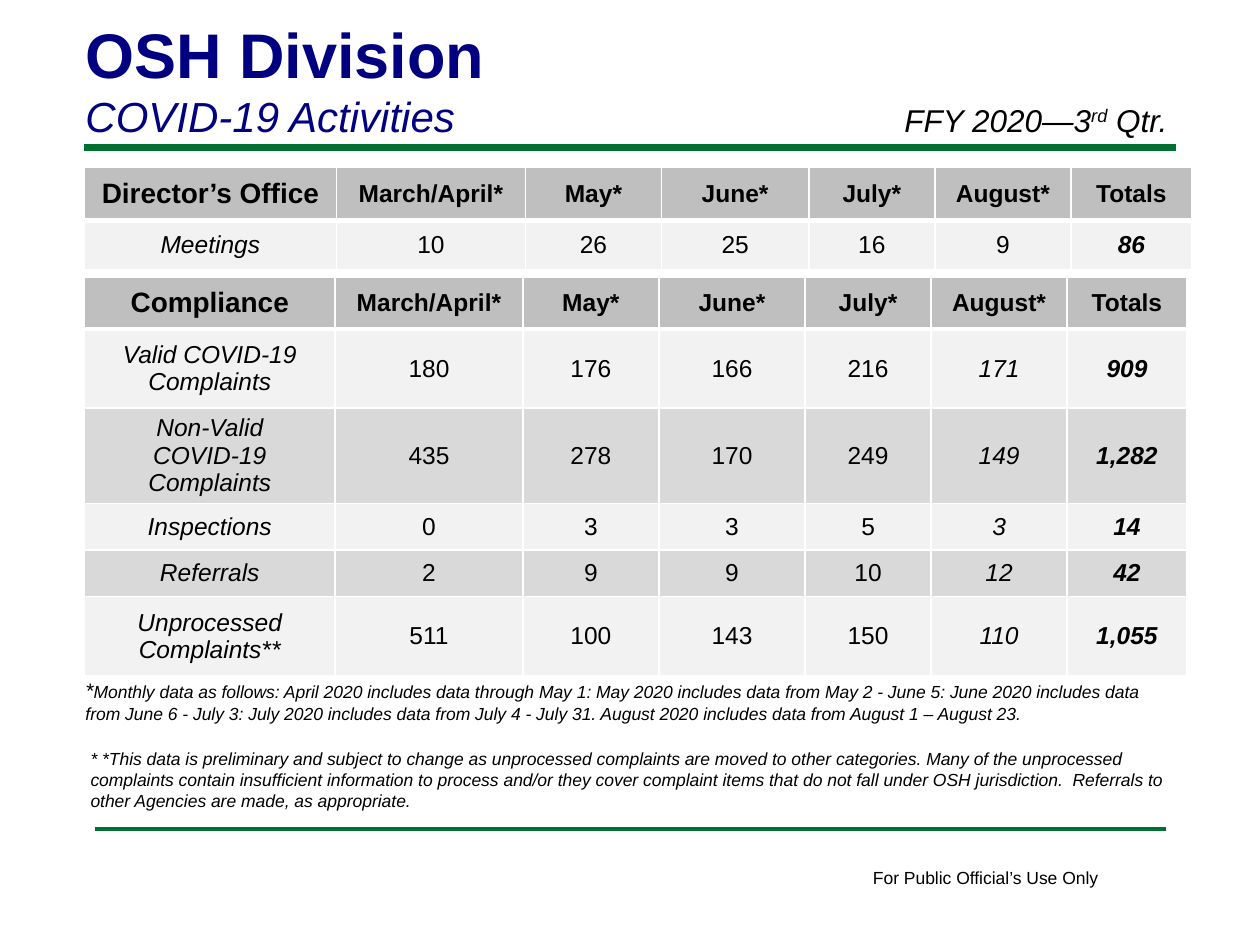
"""Build the OSH Division COVID-19 activities slide."""
from lxml import etree
from pptx import Presentation
from pptx.dml.color import RGBColor
from pptx.enum.shapes import MSO_CONNECTOR
from pptx.enum.text import MSO_ANCHOR, PP_ALIGN
from pptx.oxml.ns import qn
from pptx.util import Inches, Pt

STRAIGHT = MSO_CONNECTOR.STRAIGHT
TOP, MIDDLE, BOTTOM = MSO_ANCHOR.TOP, MSO_ANCHOR.MIDDLE, MSO_ANCHOR.BOTTOM
CENTER = PP_ALIGN.CENTER

FONT = "Arial"
BLACK, NAVY, GREEN, WHITE = "000000", "000080", "007030", "FFFFFF"
HEADER_FILL, BAND_FILLS = "BFBFBF", ("F2F2F2", "D9D9D9")

PERIODS = ["March/April*", "May*", "June*", "July*", "August*", "Totals"]
TABLES = [
    {
        "box": (0.67, 1.33, 8.79, 0.81),
        "columns": (2, 1.5, 1.08, 1.17, 1, 1.08, 0.96),
        "heights": (0.42, 0.39),
        "italic_columns": (0, 6),
        "rows": [
            ["Director’s Office", *PERIODS],
            ["Meetings", "10", "26", "25", "16", "9", "86"],
        ],
    },
    {
        "box": (0.67, 2.2, 8.75, 3.06),
        "columns": (1.99, 1.49, 1.08, 1.16, 1, 1.08, 0.95),
        "heights": (0.41, 0.63, 0.63, 0.37, 0.37, 0.63),
        "italic_columns": (0, 5, 6),
        "rows": [
            ["Compliance", *PERIODS],
            ["Valid COVID-19 Complaints", "180", "176", "166", "216", "171", "909"],
            ["Non-Valid COVID-19 Complaints", "435", "278", "170", "249", "149", "1,282"],
            ["Inspections", "0", "3", "3", "5", "3", "14"],
            ["Referrals", "2", "9", "9", "10", "12", "42"],
            ["Unprocessed Complaints**", "511", "100", "143", "150", "110", "1,055"],
        ],
    },
]

RULES = [(0.67, 9.33, 1.17, 4), (0.75, 9.25, 6.58, 2)]

TITLE = [
    [("OSH Division", {"size": 36, "color": NAVY, "bold": True})],
    [("COVID-19 Activities", {"size": 24, "color": NAVY, "italic": True})],
]
QUARTER = [[
    ("FFY 2020—3", {"size": 18, "italic": True}),
    ("rd", {"size": 18, "italic": True, "baseline": 30}),
    (" Qtr.", {"size": 18, "italic": True}),
]]
MONTHLY_NOTE = [[
    ("*", {"size": 12, "italic": True}),
    ("Monthly data as follows: April 2020 includes data through May 1: May 2020 "
     "includes data from May 2 - June 5: June 2020 includes data from June 6 - July 3: "
     "July 2020 includes data from July 4 - July 31. August 2020 includes data from "
     "August 1 – August 23.", {"size": 10, "italic": True}),
]]
PRELIMINARY_NOTE = [[
    ("* *This data is preliminary and subject to change as unprocessed complaints are "
     "moved to other categories. Many of the unprocessed complaints contain insufficient "
     "information to process and/or they cover complaint items that do not fall under OSH "
     "jurisdiction.  Referrals to other Agencies are made, as appropriate.",
     {"size": 10, "italic": True}),
]]
USE_NOTICE = [[("For Public Official’s Use Only", {"size": 10})]]

TEXTS = [
    ((6.83, 6.83, 2.01, 0.27), USE_NOTICE, TOP, False),
    ((0.58, 0.06, 8.25, 1.11), TITLE, BOTTOM, True),
    ((0.62, 5.89, 8.79, 0.61), PRELIMINARY_NOTE, TOP, True),
    ((7.08, 0.75, 2.5, 0.4), QUARTER, TOP, True),
    ((0.58, 5.33, 8.79, 0.47), MONTHLY_NOTE, TOP, True),
]


def rgb(color):
    return RGBColor.from_string(color)


def style_run(run, size, color=BLACK, bold=False, italic=False, baseline=0):
    font = run.font
    font.name, font.size = FONT, Pt(size)
    font.bold, font.italic = bold, italic
    font.color.rgb = rgb(color)
    if baseline:
        run._r.get_or_add_rPr().set("baseline", str(baseline * 1000))


def add_rule(slide, left, right, y, width):
    rule = slide.shapes.add_connector(
        STRAIGHT, Inches(left), Inches(y), Inches(right), Inches(y))
    rule.line.color.rgb = rgb(GREEN)
    rule.line.width = Pt(width)
    etree.SubElement(rule._element.spPr, qn("a:effectLst"))


def add_text(slide, box, paragraphs, anchor, wrap):
    frame = slide.shapes.add_textbox(*map(Inches, box)).text_frame
    frame.word_wrap = wrap
    frame.vertical_anchor = anchor
    for index, pieces in enumerate(paragraphs):
        paragraph = frame.add_paragraph() if index else frame.paragraphs[0]
        for text, style in pieces:
            run = paragraph.add_run()
            run.text = text
            style_run(run, **style)


def set_borders(cell, top, bottom):
    properties = cell._tc.get_or_add_tcPr()
    for side, width in (("L", 1), ("R", 1), ("T", top), ("B", bottom)):
        line = etree.SubElement(properties, qn(f"a:ln{side}"), w=str(Pt(width)))
        fill = etree.SubElement(line, qn("a:solidFill"))
        etree.SubElement(fill, qn("a:srgbClr"), val=WHITE)


def fill_cell(cell, text, row, column, italic_columns):
    header = row == 0
    set_borders(cell, top=3 if row == 1 else 1, bottom=3 if header else 1)
    cell.fill.solid()
    cell.fill.fore_color.rgb = rgb(HEADER_FILL if header else BAND_FILLS[(row - 1) % 2])
    cell.vertical_anchor = MIDDLE
    cell.text_frame.text = text
    paragraph = cell.text_frame.paragraphs[0]
    paragraph.alignment = CENTER
    style_run(
        paragraph.runs[0],
        size=16 if header and column == 0 else 14,
        bold=header or column == len(PERIODS),
        italic=not header and column in italic_columns,
    )


def add_activity_table(slide, box, columns, heights, italic_columns, rows):
    table = slide.shapes.add_table(len(rows), len(columns), *map(Inches, box)).table
    table.first_row = table.horz_banding = False
    for column, width in zip(table.columns, columns):
        column.width = Inches(width)
    for row, height in zip(table.rows, heights):
        row.height = Inches(height)
    for r, values in enumerate(rows):
        for c, value in enumerate(values):
            fill_cell(table.cell(r, c), value, r, c, italic_columns)


def main():
    deck = Presentation()
    deck.slide_width, deck.slide_height = Inches(10), Inches(7.5)
    slide = deck.slides.add_slide(deck.slide_layouts[6])
    for rule in RULES:
        add_rule(slide, *rule)
    for activity in TABLES:
        add_activity_table(slide, **activity)
    for text in TEXTS:
        add_text(slide, *text)
    deck.save("out.pptx")


if __name__ == "__main__":
    main()
